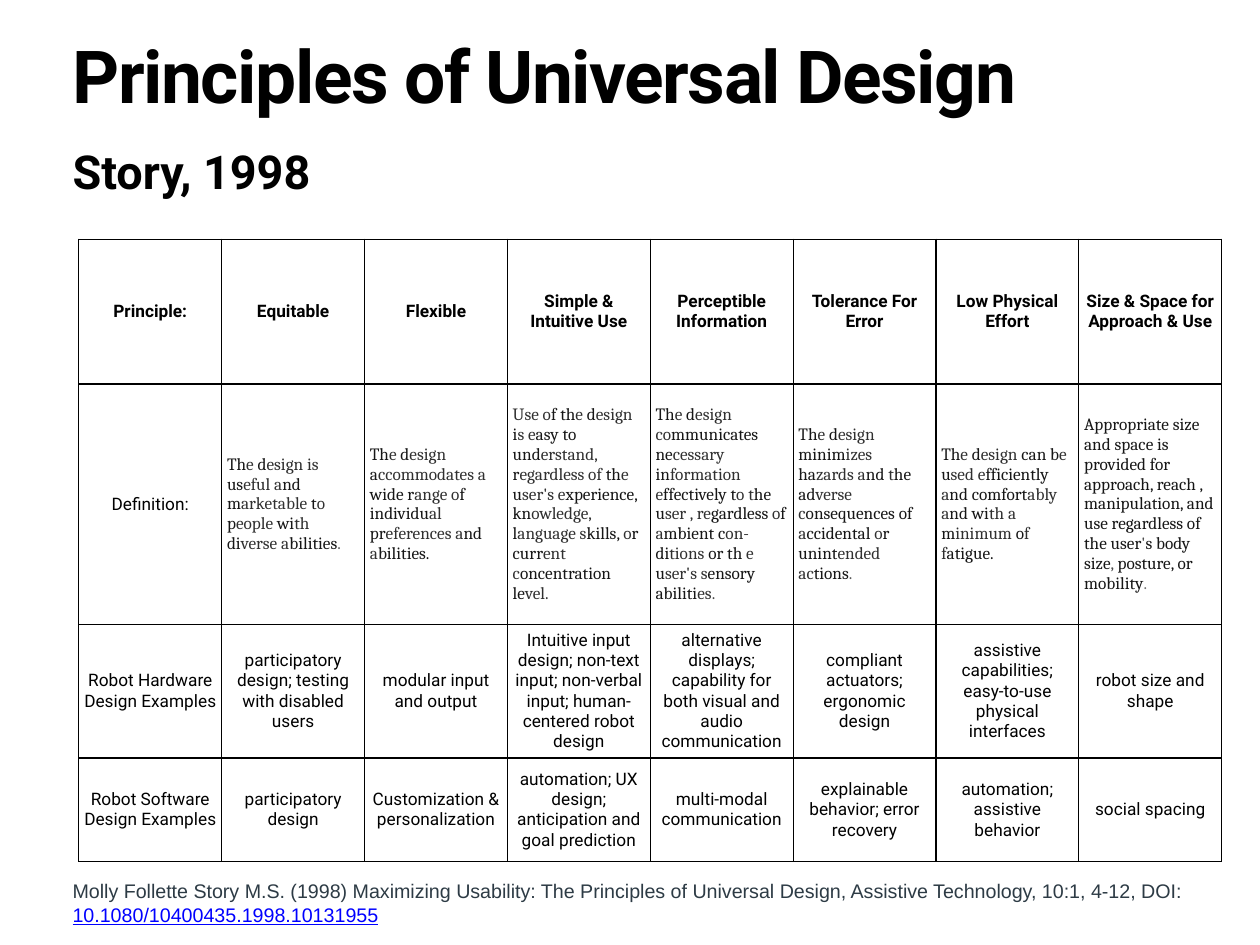
from pptx import Presentation
from pptx.dml.color import RGBColor
from pptx.enum.text import MSO_ANCHOR as Anchor, MSO_AUTO_SIZE as AutoSize, PP_ALIGN as Align
from pptx.oxml import parse_xml
from pptx.oxml.ns import nsdecls
from pptx.util import Inches, Pt

BLACK, DARK, GREY, FAINT = "000000", "161616", "303030", "4D4D4D"

PRINCIPLES = ["Principle:", "Equitable", "Flexible", "Simple & Intuitive Use",
              "Perceptible Information", "Tolerance For Error",
              "Low Physical Effort", "Size & Space for Approach & Use"]

# Text whose shade alternates at each bar, the second shade, the shade of the last run
DEFINITIONS = [
    ("Th|e |d|esign is |us|eful a|nd m|arketable |t|o |p|eople |wi|th |di|verse a|bilities|.",
     GREY, "5C5C5C"),
    ("Th|e |d|esign |a|ccommodates a |wide r|ange o|f individu|al |pr|eferences a|nd |a|bilities.",
     GREY, DARK),
    ("|Use o|f th|e |d|esign |i|s e|asy to und|erstand, |r|egardless of |th|e |u|ser's e|"
     "xperience, kn|owledge, |l|anguage s|kills, |o|r curr|ent c|oncentration le|vel.",
     GREY, GREY),
    ("Th|e |d|esign co|mmunicates ne|cessary |in|formation e|ffectively t|o t|he u|ser , re|"
     "gardless |o|f |a|mbient c|on- |di|tions |or th |e |u|ser's s|ensory abiliti|es|.",
     GREY, FAINT),
    ("Th|e |d|esign |minim|izes |ha|zards a|nd |t|he ad|verse c|onsequences of |a|ccidental |"
     "o|r unint|ended ac|tions|.",
     GREY, "5C5C5C"),
    ("Th|e |d|esign |can b|e |u|sed e|fficiently |a|nd comfort|ably a|nd wi|th a |m|inimum |"
     "o|f f|atigue.",
     GREY, DARK),
    ("Appropriate size and space is provided for approach, reach , manipulation, and use "
     "regardless of the user|'|s body size|, |posture, or mobility|.",
     FAINT, "737373"),
]

HARDWARE = ["Robot Hardware Design Examples",
            "participatory design; testing with disabled users",
            "modular input and output",
            "Intuitive input design; non-text input; non-verbal input; human-centered robot design",
            "alternative displays; capability for both visual and audio communication",
            "compliant actuators; ergonomic design",
            "assistive capabilities; easy-to-use physical interfaces",
            "robot size and shape"]

SOFTWARE = ["Robot Software Design Examples", "participatory design",
            "Customization & personalization",
            "automation; UX design; anticipation and goal prediction",
            "multi-modal communication", "explainable behavior; error recovery",
            "automation; assistive behavior", "social spacing"]


def color(hex_string):
    return RGBColor.from_string(hex_string)


def shaded_runs(text, second, last):
    """Alternate two shades over the pieces of a text and give the last its own."""
    pieces = text.split("|")
    shades = [(DARK, second)[index % 2] for index in range(len(pieces))]
    shades[-1] = last
    return [(piece, shade) for piece, shade in zip(pieces, shades) if piece]


class SlideBuilder:
    """Places elements on a grid of 100 columns by 100 rows."""
    FONT, SERIF, PLAIN = "Roboto", "Cambria", "Arial"
    INSET = Inches(0.06)

    def __init__(self, presentation):
        self.column = presentation.slide_width / 100
        self.row = presentation.slide_height / 100
        self.slide = presentation.slides.add_slide(presentation.slide_layouts[1])

    def box(self, left, top, width, height):
        return (round(left * self.column), round(top * self.row),
                round(width * self.column), round(height * self.row))

    def add_runs(self, paragraph, runs, size, font=FONT, bold=False, align=Align.LEFT):
        paragraph.alignment = align
        paragraph.font.size = Pt(size)
        paragraph.font.name = font
        paragraph.font.bold = bold
        for text, shade in runs:
            run = paragraph.add_run()
            run.text = text
            run.font.color.rgb = color(shade)

    def set_insets(self, holder):
        holder.margin_left = holder.margin_right = self.INSET
        holder.margin_top = holder.margin_bottom = self.INSET

    def prepare(self, shape, anchor):
        frame = shape.text_frame
        frame.word_wrap = True
        frame.auto_size = AutoSize.NONE
        frame.vertical_anchor = anchor
        self.set_insets(frame)
        return frame.paragraphs[0]

    def heading(self, index, text, grid, size, line_spacing=1.0, tracking=0):
        shape = self.slide.placeholders[index]
        shape.left, shape.top, shape.width, shape.height = self.box(*grid)
        paragraph = self.prepare(shape, Anchor.TOP)
        self.add_runs(paragraph, [(text, BLACK)], size, bold=True)
        paragraph.line_spacing = line_spacing
        paragraph.space_before = Pt(0)
        properties = paragraph._p.get_or_add_pPr()
        properties.set("marL", "0")
        properties.set("indent", "0")
        properties.insert_element_before(
            parse_xml(f"<a:buNone {nsdecls('a')}/>"), "a:tabLst", "a:defRPr", "a:extLst")
        paragraph.runs[0]._r.get_or_add_rPr().set("spc", str(round(tracking * 100)))

    def text_box(self, runs, grid, size):
        shape = self.slide.shapes.add_textbox(*self.box(*grid))
        paragraph = self.prepare(shape, Anchor.MIDDLE)
        self.add_runs(paragraph, runs, size, font=self.PLAIN)
        return paragraph

    def table(self, grid, row_heights, column_count):
        frame = self.slide.shapes.add_table(len(row_heights), column_count, *self.box(*grid))
        table = frame.table
        table.first_row = table.horz_banding = False
        for row, height in zip(table.rows, row_heights):
            row.height = round(height * self.row)
        return table

    def cell(self, cell, runs, bottom_border=1, space_before=0, **style):
        self.set_insets(cell)
        cell.vertical_anchor = Anchor.MIDDLE
        paragraph = cell.text_frame.paragraphs[0]
        self.add_runs(paragraph, runs, 14, **style)
        paragraph.space_before = Pt(space_before)
        properties = cell._tc.get_or_add_tcPr()
        for side, width in zip("LRTB", (1, 1, 1, bottom_border)):
            properties.append(parse_xml(
                f'<a:ln{side} {nsdecls("a")} w="{int(Pt(width))}"><a:solidFill>'
                f'<a:srgbClr val="{BLACK}"/></a:solidFill></a:ln{side}>'))
        cell.fill.background()


def main():
    presentation = Presentation()
    presentation.slide_width, presentation.slide_height = Inches(14.22), Inches(10.67)
    builder = SlideBuilder(presentation)

    # Title and subtitle
    builder.heading(0, "Principles of Universal Design", (5.34, 4.5, 89.24, 10.4), 59.4,
                    line_spacing=0.8, tracking=-1.2)
    builder.heading(1, "Story, 1998", (5.34, 14.53, 89.24, 6.84), 38)

    # Table of principles
    table = builder.table((6.26, 25.3, 90.72, 65.9), (15.37, 25.4, 14.15, 10.97),
                          len(PRINCIPLES))
    label_rows = [PRINCIPLES, ["Definition:"], HARDWARE, SOFTWARE]
    for row, labels in enumerate(label_rows):
        is_header = row == 0
        for column, label in enumerate(labels):
            builder.cell(table.cell(row, column), [(label, BLACK)], bold=is_header,
                         bottom_border=2 if is_header else 1, align=Align.CENTER)
    for column, definition in enumerate(DEFINITIONS, start=1):
        builder.cell(table.cell(1, column), shaded_runs(*definition),
                     space_before=12, font=builder.SERIF)

    # Citation
    citation = builder.text_box(
        [("Molly Follette Story M.S. (1998) Maximizing Usability: The Principles of Universal "
          "Design, Assistive Technology, 10:1, 4-12, DOI: ", "2D3B45"),
         ("10.1080/10400435.1998.10131955", "0000FF")],
        (5.34, 92.5, 89.66, 6), 16)
    citation.runs[-1].font.underline = True

    presentation.save("out.pptx")


if __name__ == "__main__":
    main()
